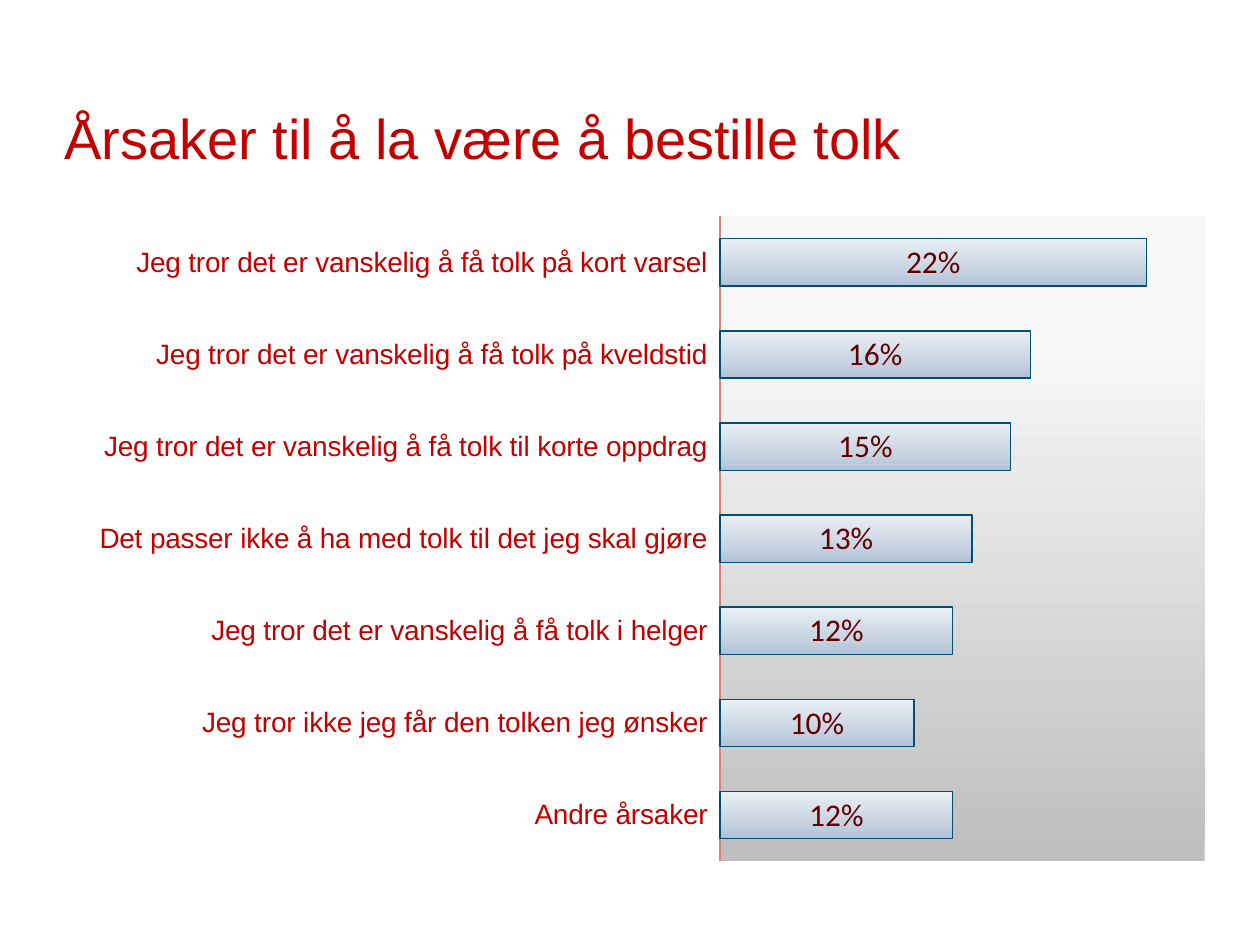
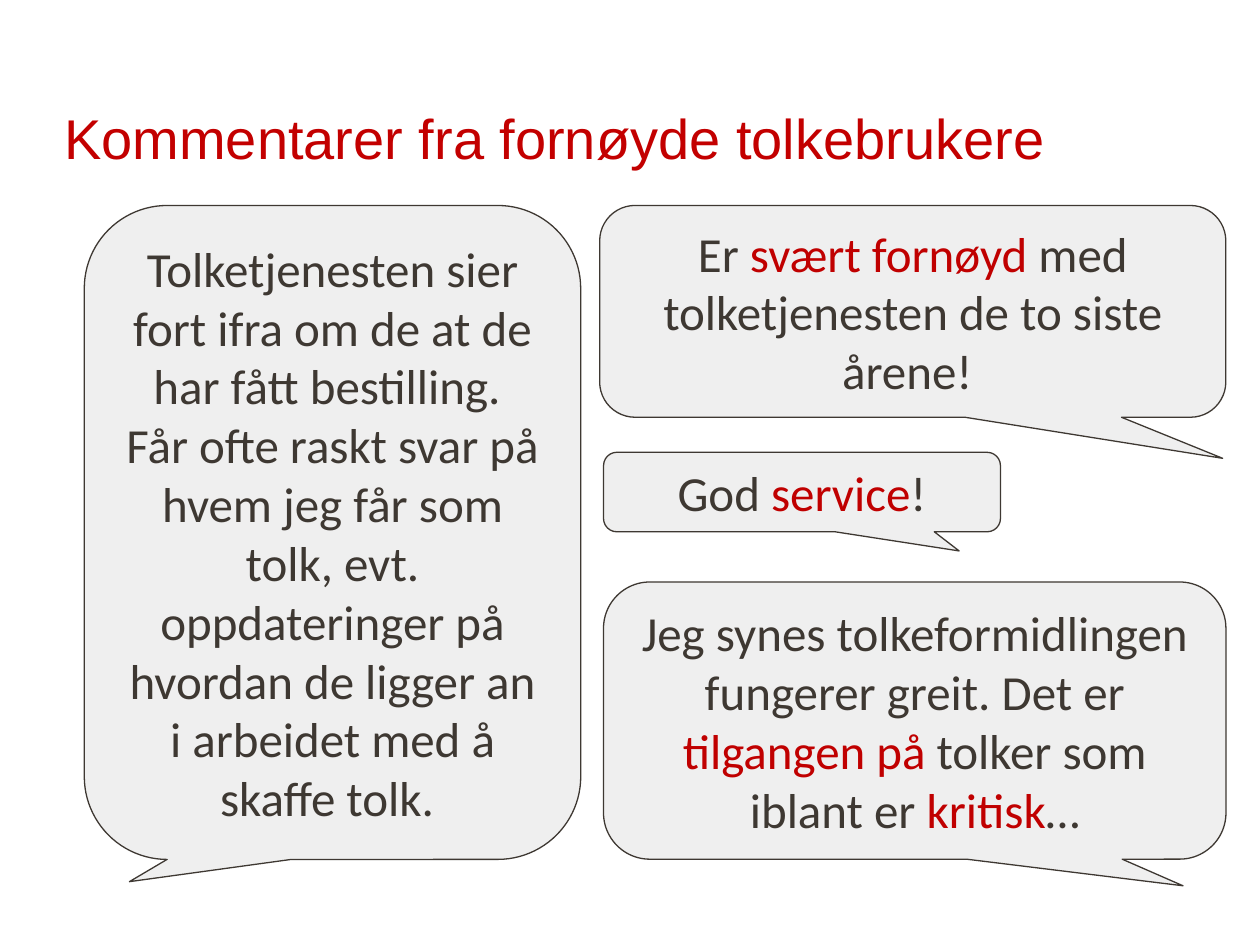
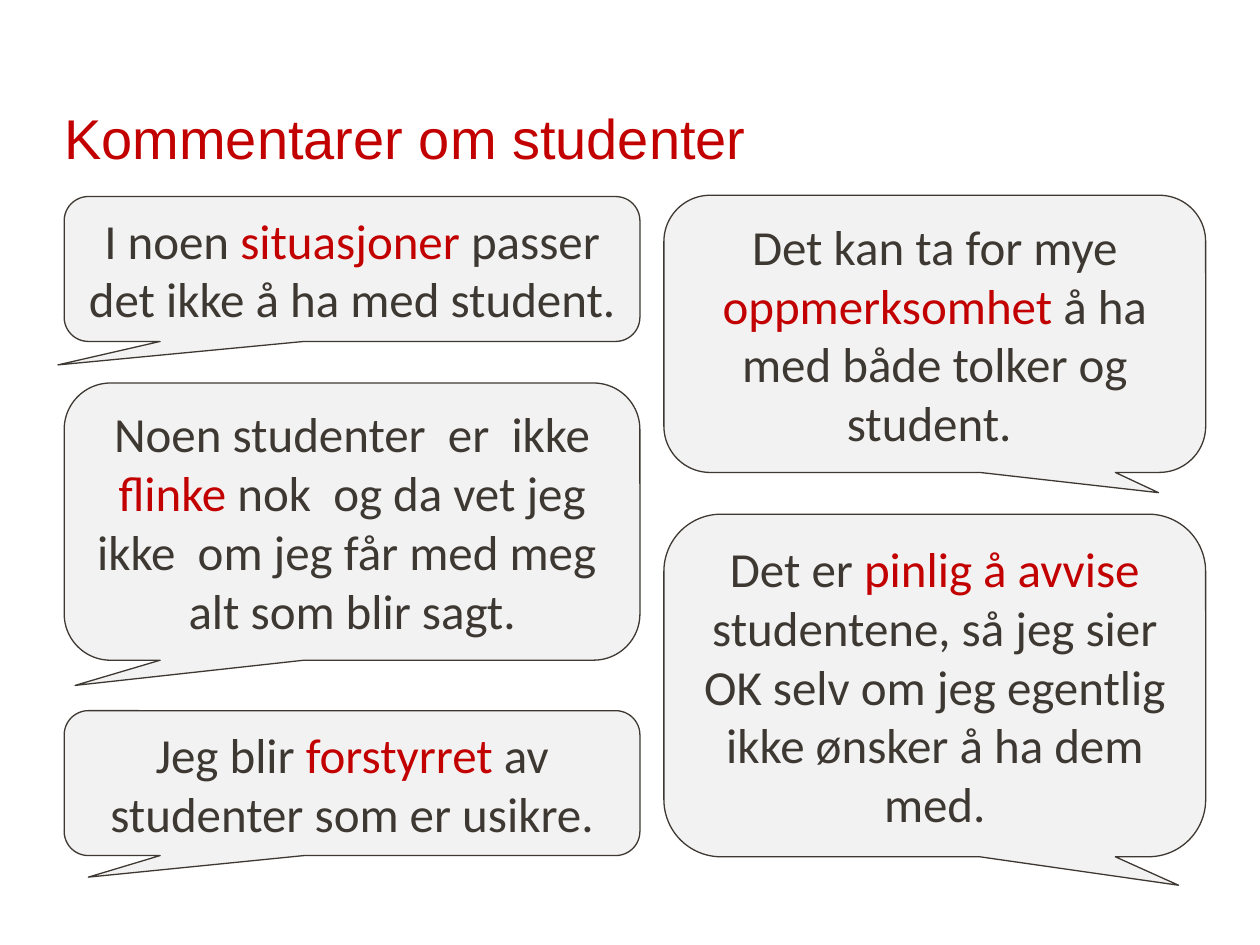
from dataclasses import dataclass

from pptx import Presentation
from pptx.chart.data import CategoryChartData as ChartData
from pptx.dml.color import RGBColor as Rgb
from pptx.enum.chart import XL_CHART_TYPE as Kind
from pptx.enum.chart import XL_LABEL_POSITION as Spot
from pptx.enum.chart import XL_TICK_LABEL_POSITION as TickSpot
from pptx.enum.chart import XL_TICK_MARK as Tick
from pptx.enum.shapes import MSO_SHAPE as Shape
from pptx.enum.text import MSO_ANCHOR as Anchor
from pptx.enum.text import MSO_AUTO_SIZE as Fit
from pptx.enum.text import PP_ALIGN as Align
from pptx.oxml import parse_xml
from pptx.oxml.ns import nsdecls
from pptx.util import Pt


@dataclass(frozen=True)
class Theme:
    red: str = "C30000"
    brick: str = "C00000"
    wine: str = "620000"
    ink: str = "3E3832"
    navy: str = "005072"
    rose: str = "D98080"
    mist: str = "EFEFEF"
    cloud: str = "F2F2F2"
    wall: tuple = ((0, "BEBEBE"), (80, "F7F7F7"), (100, "F8F8F8"))
    steel: tuple = ((0, "B0C1D7"), (35, "C8D4E2"), (100, "EAEFF4"))
    head: str = "Arial"
    body: str = "Calibri"
    title: int = 32
    quote: int = 28
    value: int = 18
    label: int = 16
    thin: float = 0.75


look = Theme()


def write(frame, text, *, font, size, color, accent=None, align=Align.LEFT, anchor=Anchor.MIDDLE):
    frame.word_wrap = True
    frame.vertical_anchor = anchor
    for row, line in enumerate(text.split("\n")):
        para = frame.add_paragraph() if row else frame.paragraphs[0]
        para.alignment = align
        for part, words in enumerate(line.split("*")):
            if words:
                run = para.add_run()
                run.text = words
                run.font.name = font
                run.font.size = Pt(size)
                run.font.color.rgb = Rgb.from_string(accent if part % 2 else color)


def shade(props, stops):
    marks = "".join(
        f'<a:gs pos="{pos * 1000}"><a:srgbClr val="{color}"/></a:gs>' for pos, color in stops
    )
    props.insert(0, parse_xml(
        f'<a:gradFill {nsdecls("a")} rotWithShape="1"><a:gsLst>{marks}</a:gsLst>'
        '<a:lin ang="16200000" scaled="0"/></a:gradFill>'
    ))


deck = Presentation()
deck.slide_width, deck.slide_height = Pt(720), Pt(540)

pages = []
for text in (
    "Årsaker til å la være å bestille tolk",
    "Kommentarer fra fornøyde tolkebrukere",
    "Kommentarer om studenter",
):
    page = deck.slides.add_slide(deck.slide_layouts[5])
    title = page.shapes.title
    title.left, title.top, title.width, title.height = Pt(29.5), Pt(15), Pt(660), Pt(86)
    write(title.text_frame, text, font=look.head, size=look.title, color=look.red,
          anchor=Anchor.BOTTOM)
    pages.append(page)

causes = {
    "Andre årsaker": 0.12,
    "Jeg tror ikke jeg får den tolken jeg ønsker": 0.10,
    "Jeg tror det er vanskelig å få tolk i helger": 0.12,
    "Det passer ikke å ha med tolk til det jeg skal gjøre": 0.13,
    "Jeg tror det er vanskelig å få tolk til korte oppdrag": 0.15,
    "Jeg tror det er vanskelig å få tolk på kveldstid": 0.16,
    "Jeg tror det er vanskelig å få tolk på kort varsel": 0.22,
}
data = ChartData(number_format="0%")
data.categories = list(causes)
data.add_series("", list(causes.values()))
chart = pages[0].shapes.add_chart(
    Kind.BAR_STACKED, Pt(-54), Pt(71.2), Pt(754.5), Pt(433.5), data
).chart
chart.has_title = False
chart.has_legend = False
chart.font.name = look.body
chart.font.size = Pt(look.value)
chart.font.color.rgb = Rgb.from_string(look.red)

names = chart.category_axis
names.major_tick_mark = names.minor_tick_mark = Tick.NONE
names.tick_label_position = TickSpot.LOW
names.tick_labels.font.name = look.head
names.tick_labels.font.size = Pt(look.label)
names.tick_labels.font.color.rgb = Rgb.from_string(look.red)
names.format.line.color.rgb = Rgb.from_string(look.rose)
names.format.line.width = Pt(look.thin)

scale = chart.value_axis
scale.minimum_scale, scale.maximum_scale = 0, 0.25
scale.has_major_gridlines = False
scale.visible = False

plot = chart.plots[0]
plot.gap_width, plot.overlap = 95, 100
plot.vary_by_categories = False
plot.has_data_labels = True
tags = plot.data_labels
tags.show_value = True
tags.number_format, tags.number_format_is_linked = "0%", False
tags.position = Spot.CENTER
tags.font.name = look.body
tags.font.size = Pt(look.value)
tags.font.color.rgb = Rgb.from_string(look.wine)

bars = plot.series[0]
bars.invert_if_negative = False
shade(bars._element.get_or_add_spPr(), look.steel)
bars.format.line.color.rgb = Rgb.from_string(look.navy)
bars.format.line.width = Pt(look.thin)

area = chart._chartSpace.chart.plotArea
frame = "".join(
    f'<c:{key} val="{val}"/>' for key, val in (
        ("layoutTarget", "inner"), ("xMode", "edge"), ("yMode", "edge"),
        ("x", 0.617), ("y", 0.121), ("w", 0.367), ("h", 0.85),
    )
)
for old in area.findall("{*}layout"):
    area.remove(old)
area.insert(0, parse_xml(
    f'<c:layout {nsdecls("c")}><c:manualLayout>{frame}</c:manualLayout></c:layout>'
))
wall = parse_xml(f'<c:spPr {nsdecls("c", "a")}/>')
shade(wall, look.wall)
area.append(wall)

happy = (
    ((48.2, 117.4, 283.7, 373.7), (-0.409, 0.534),
     "Tolketjenesten sier fort ifra om de at de har fått bestilling. \n"
     "Får ofte raskt svar på hvem jeg får som tolk, evt. oppdateringer på "
     "hvordan de ligger an i arbeidet med å skaffe tolk. "),
    ((344.9, 332.6, 355.7, 158.4), (0.431, 0.596),
     "Jeg synes tolkeformidlingen fungerer greit. Det er *tilgangen på *"
     "tolker som iblant er *kritisk*…"),
    ((344.9, 258.5, 226.8, 45.4), (0.396, 0.741), "God *service*!"),
    ((342.7, 117.4, 357.8, 121), (0.495, 0.694),
     "Er *svært fornøyd *med tolketjenesten de to siste årene! "),
)
left, wide = 36.7, 329
right, slim = 379.4, 309.6
pupils = (
    ((right, 293.8, slim, 195.8), (0.45, 0.583),
     "Det er *pinlig å avvise *studentene, så jeg sier OK selv om jeg egentlig "
     "ikke ønsker å ha dem med."),
    ((left, 218.9, wide, 158.4), (-0.481, 0.591),
     "Noen studenter  er  ikke *flinke *nok  og da vet jeg ikke  om jeg får med meg \n"
     "alt som blir sagt."),
    ((left, 406.1, wide, 82.8), (-0.458, 0.649),
     "Jeg blir *forstyrret *av studenter som er usikre."),
    ((left, 112.3, wide, 82.8), (-0.511, 0.662),
     "I noen *situasjoner *passer det ikke å ha med student."),
    ((right, 111.6, slim, 158.4), (0.413, 0.573),
     "Det kan ta for mye *oppmerksomhet *å ha med både tolker og student. "),
)

for page, quotes, fill, accent in (
    (pages[1], happy, look.mist, look.brick),
    (pages[2], pupils, look.cloud, look.red),
):
    for box, tip, text in quotes:
        bubble = page.shapes.add_shape(Shape.ROUNDED_RECTANGULAR_CALLOUT, *map(Pt, box))
        bubble.shadow.inherit = False
        for spot, val in enumerate((*tip, 0.167)):
            bubble.adjustments[spot] = val
        bubble.fill.solid()
        bubble.fill.fore_color.rgb = Rgb.from_string(fill)
        bubble.line.color.rgb = Rgb.from_string(look.ink)
        bubble.line.width = Pt(look.thin)
        write(bubble.text_frame, text, font=look.body, size=look.quote, color=look.ink,
              accent=accent, align=Align.CENTER)
        bubble.text_frame.auto_size = Fit.SHAPE_TO_FIT_TEXT

deck.save("out.pptx")
